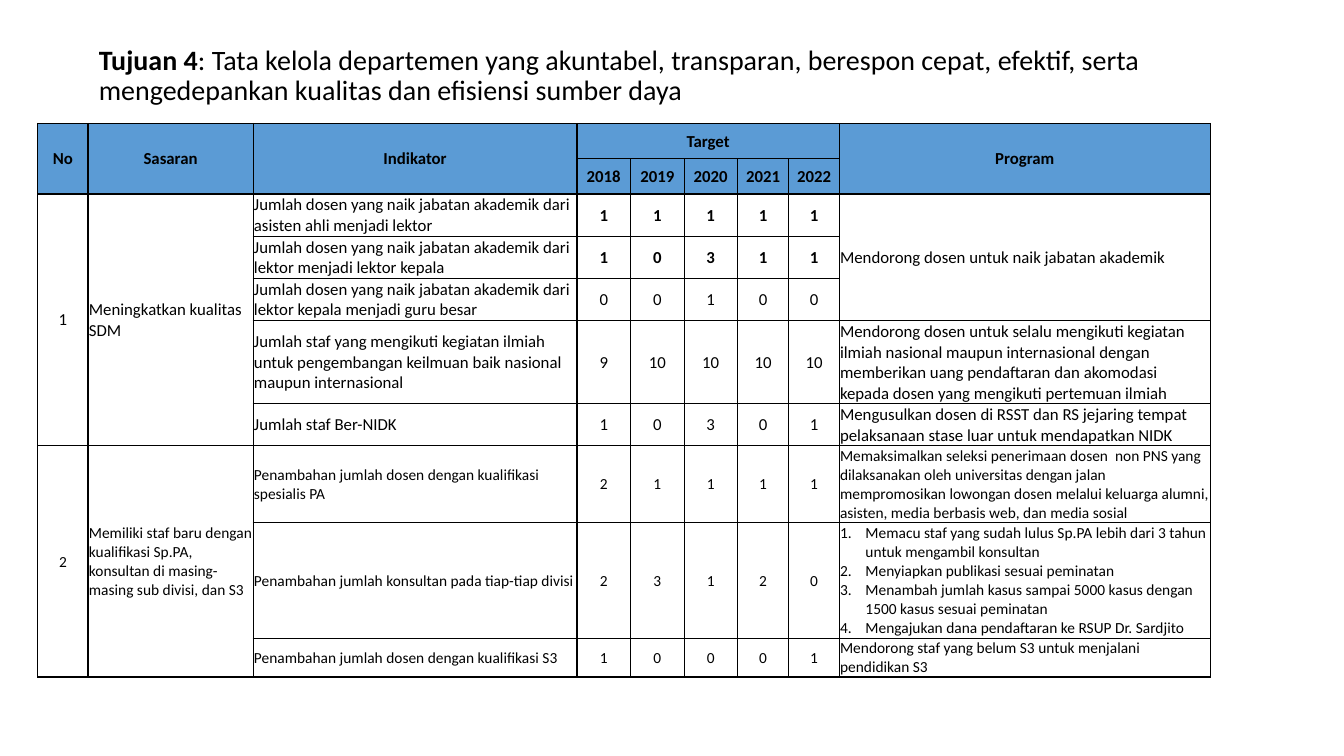
from lxml import etree
from pptx import Presentation
from pptx import util as u
from pptx.dml.color import RGBColor
from pptx.enum import text
from pptx.oxml.ns import qn

COLORS = {"ink": "000000", "header": "5B9BD5"}
FONT = "Calibri"
COL_WIDTHS = [1.27, 4.16, 8.16, 1.35, 1.35, 1.34, 1.3, 1.27, 9.35]
ROW_HEIGHTS = [0.89, 0.89, 1.06, 1.06, 1.06, 2.1, 1.06, 1.94, 2.91, 0.98]
MERGES = [(0, 0, 1, 0), (0, 1, 1, 1), (0, 2, 1, 2), (0, 3, 0, 7), (0, 8, 1, 8),
          (2, 0, 6, 0), (2, 1, 6, 1), (2, 8, 4, 8), (7, 0, 9, 0), (7, 1, 9, 1)]
HEADER_ROWS = 2
BOLD_TARGET_ROWS = (2, 3)
FIRST_SMALL_ROW = 7
FIRST_BOTTOM_ROW = 5
TEXT_COLS = (1, 2, 8)
PROGRAM_COL = 8
ROWS = [
    ["No", "Sasaran", "Indikator", "Target", "", "", "", "", "Program"],
    ["", "", "", "2018", "2019", "2020", "2021", "2022", ""],
    ["1", "Meningkatkan kualitas SDM",
     "Jumlah dosen yang naik jabatan akademik dari asisten ahli menjadi lektor",
     "1", "1", "1", "1", "1", "Mendorong dosen untuk naik jabatan akademik"],
    ["", "", "Jumlah dosen yang naik jabatan akademik dari lektor menjadi lektor kepala",
     "1", "0", "3", "1", "1", ""],
    ["", "", "Jumlah dosen yang naik jabatan akademik dari lektor kepala menjadi guru besar",
     "0", "0", "1", "0", "0", ""],
    ["", "", "Jumlah staf yang mengikuti kegiatan ilmiah untuk pengembangan keilmuan "
     "baik nasional maupun internasional", "9", "10", "10", "10", "10",
     "Mendorong dosen untuk selalu mengikuti kegiatan ilmiah nasional maupun internasional "
     "dengan memberikan uang pendaftaran dan akomodasi kepada dosen yang mengikuti "
     "pertemuan ilmiah"],
    ["", "", "Jumlah staf Ber-NIDK", "1", "0", "3", "0", "1",
     "Mengusulkan dosen di RSST dan RS jejaring tempat pelaksanaan stase luar "
     "untuk mendapatkan NIDK"],
    ["2", "Memiliki staf baru dengan kualifikasi Sp.PA, konsultan di masing-masing "
     "sub divisi, dan S3", "Penambahan jumlah dosen dengan kualifikasi spesialis PA",
     "2", "1", "1", "1", "1",
     "Memaksimalkan seleksi penerimaan dosen  non PNS yang dilaksanakan oleh universitas "
     "dengan jalan mempromosikan lowongan dosen melalui keluarga alumni, asisten, "
     "media berbasis web, dan media sosial"],
    ["", "", "Penambahan jumlah konsultan pada tiap-tiap divisi", "2", "3", "1", "2", "0",
     ["Memacu staf yang sudah lulus Sp.PA lebih dari 3 tahun untuk mengambil konsultan",
      "Menyiapkan publikasi sesuai peminatan",
      "Menambah jumlah kasus sampai 5000 kasus dengan 1500 kasus sesuai peminatan",
      "Mengajukan dana pendaftaran ke RSUP Dr. Sardjito"]],
    ["", "", "Penambahan jumlah dosen dengan kualifikasi S3", "1", "0", "0", "0", "1",
     "Mendorong staf yang belum S3 untuk menjalani pendidikan S3"],
]


def add_run(p, words, size, bold=False):
    """Append one styled run to a paragraph."""
    r = p.add_run()
    r.text = words
    r.font.name = FONT
    r.font.size = u.Pt(size)
    r.font.bold = bold
    r.font.color.rgb = RGBColor.from_string(COLORS["ink"])


def add_number(p):
    """Number a paragraph with a hanging indent."""
    pPr = p._p.get_or_add_pPr()
    indent = int(u.Cm(0.64))
    pPr.set("marL", str(indent))
    pPr.set("indent", str(-indent))
    etree.SubElement(pPr, qn("a:buFont"), typeface="+mj-lt")
    etree.SubElement(pPr, qn("a:buAutoNum"), type="arabicPeriod")


def set_borders(cell):
    """Draw a thin line on each side of a cell."""
    tcPr = cell._tc.get_or_add_tcPr()
    for side in ("a:lnL", "a:lnR", "a:lnT", "a:lnB"):
        ln = etree.SubElement(tcPr, qn(side), w=str(int(u.Pt(1))))
        fill = etree.SubElement(ln, qn("a:solidFill"))
        etree.SubElement(fill, qn("a:srgbClr"), val=COLORS["ink"])


def fill_cell(cell, row, col, content):
    """Style one table cell and write its content."""
    header = row < HEADER_ROWS
    cell.margin_left = cell.margin_right = cell.margin_top = u.Cm(0.02)
    cell.margin_bottom = 0
    bottom = col == PROGRAM_COL and row >= FIRST_BOTTOM_ROW
    cell.vertical_anchor = text.MSO_ANCHOR.BOTTOM if bottom else text.MSO_ANCHOR.MIDDLE
    set_borders(cell)
    if header:
        cell.fill.solid()
        cell.fill.fore_color.rgb = RGBColor.from_string(COLORS["header"])
    else:
        cell.fill.background()
    if not content:
        return
    numbered = isinstance(content, list)
    size = 11 if row >= FIRST_SMALL_ROW else 12
    bold = header or (row in BOLD_TARGET_ROWS and 3 <= col < PROGRAM_COL)
    tf = cell.text_frame
    for i, words in enumerate(content if numbered else [content]):
        p = tf.add_paragraph() if i else tf.paragraphs[0]
        if numbered:
            add_number(p)
        left = col in TEXT_COLS and not header
        p.alignment = text.PP_ALIGN.LEFT if left else text.PP_ALIGN.CENTER
        add_run(p, words, size, bold)


def add_title(s, x, y, w, h):
    """Place the slide title in the given box."""
    tf = s.shapes.add_textbox(x, y, w, h).text_frame
    tf.word_wrap = True
    tf.vertical_anchor = text.MSO_ANCHOR.MIDDLE
    p = tf.paragraphs[0]
    p.line_spacing = 0.9
    add_run(p, "Tujuan 4", 20, True)
    add_run(p, ": Tata kelola departemen yang akuntabel, transparan, berespon cepat, "
            "efektif, serta mengedepankan kualitas dan efisiensi sumber daya", 20)


def add_targets(s, x, y, w, h):
    """Place the table of targets in the given box."""
    table = s.shapes.add_table(len(ROWS), len(COL_WIDTHS), x, y, w, h).table
    table.first_row = table.horz_banding = False
    for column, width in zip(table.columns, COL_WIDTHS):
        column.width = u.Cm(width)
    for line, height in zip(table.rows, ROW_HEIGHTS):
        line.height = u.Cm(height)
    for top, left, bottom, right in MERGES:
        table.cell(top, left).merge(table.cell(bottom, right))
    for row, contents in enumerate(ROWS):
        for col, content in enumerate(contents):
            fill_cell(table.cell(row, col), row, col, content)


def main():
    """Build and save the slide."""
    prs = Presentation()
    prs.slide_width, prs.slide_height = u.Cm(33.87), u.Cm(19.05)
    s = prs.slides.add_slide(prs.slide_layouts[6])
    add_title(s, u.Cm(2.24), u.Cm(1.02), u.Cm(29.31), u.Cm(1.8))
    add_targets(s, u.Cm(0.95), u.Cm(3.11), u.Cm(sum(COL_WIDTHS)), u.Cm(sum(ROW_HEIGHTS)))
    prs.save("out.pptx")


if __name__ == "__main__":
    main()
